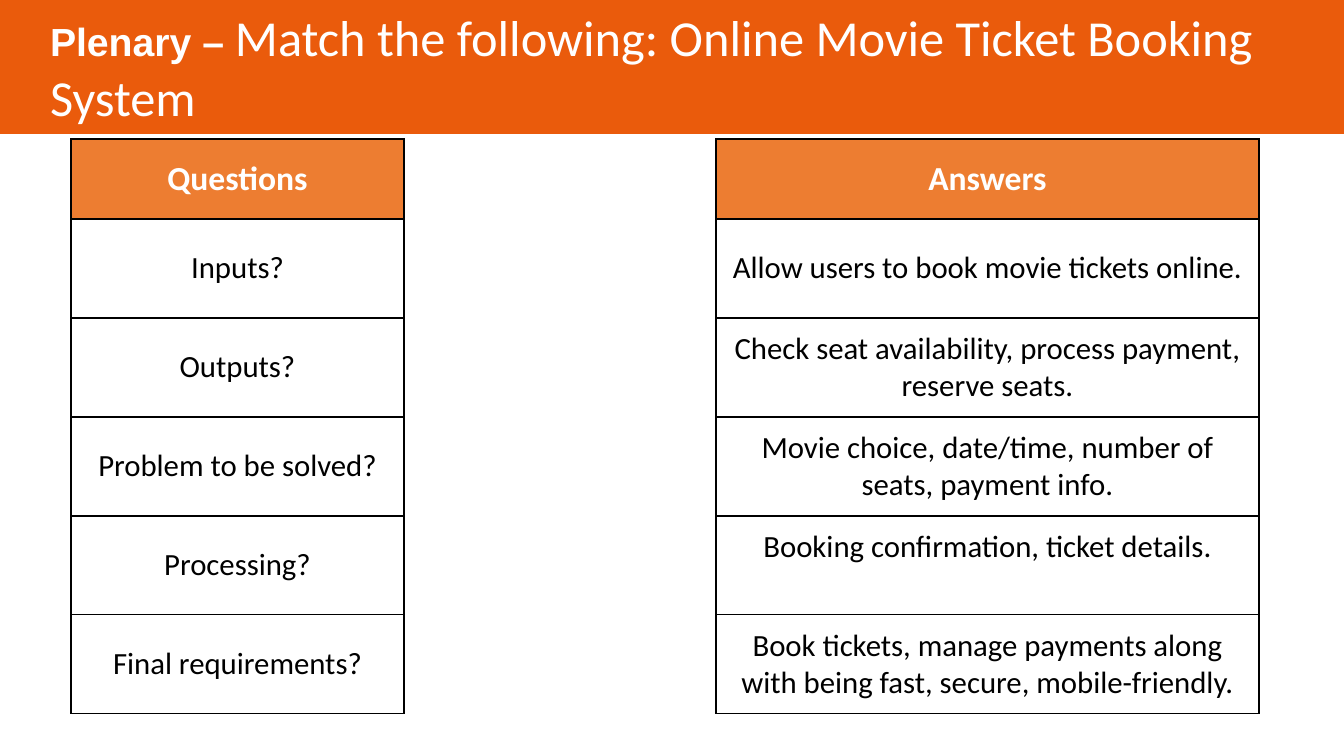
from lxml import etree
from pptx import Presentation
from pptx.dml.color import RGBColor
from pptx.enum import shapes, text
from pptx.oxml import ns
from pptx.util import Emu, Pt

# Content
TITLE_LEAD = "Plenary – "
TITLE = "Match the following: Online Movie Ticket Booking System"
ROWS = [
    ("Questions", "Answers"),
    ("Inputs?", "Allow users to book movie tickets online."),
    ("Outputs?", "Check seat availability, process payment, reserve seats."),
    ("Problem to be solved?", "Movie choice, date/time, number of seats, payment info."),
    ("Processing?", "Booking confirmation, ticket details."),
    ("Final requirements?",
     "Book tickets, manage payments along with being fast, secure, mobile-friendly."),
]
RAISED = "Booking confirmation, ticket details."

# Layout in px
SLIDE_W, SLIDE_H = 1344, 756
BANNER_H, BANNER_INSET = 133, 50
TABLE_X, TABLE_Y = 71, 139
COL_WIDTHS = [333, 312, 543]
HEAD_H, ROW_H = 80, 99
RAISED_INSET = 12

BANNER, HEAD, WHITE, BLACK = "EA5B0C", "ED7D31", "FFFFFF", "000000"


def px(n):
    return Emu(round(n * 914400 / 100.8))


def rgb(code):
    return RGBColor.from_string(code)


def add_text(p, words, size, color, font="Calibri", bold=False, align=text.PP_ALIGN.CENTER):
    p.alignment = align
    r = p.add_run()
    r.text = words
    r.font.size, r.font.name, r.font.bold = Pt(size), font, bold
    r.font.color.rgb = rgb(color)


def set_borders(cell, visible):
    tc_pr = cell._tc.get_or_add_tcPr()
    for i, side in enumerate("LRTB"):
        ln = etree.Element(ns.qn(f"a:ln{side}"), w=str(Pt(1)))
        if side in visible:
            fill = etree.SubElement(ln, ns.qn("a:solidFill"))
            etree.SubElement(fill, ns.qn("a:srgbClr"), val=BLACK)
        else:
            etree.SubElement(ln, ns.qn("a:noFill"))
        tc_pr.insert(i, ln)


prs = Presentation()
prs.slide_width, prs.slide_height = px(SLIDE_W), px(SLIDE_H)
s = prs.slides.add_slide(prs.slide_layouts[6])

# Title banner
sp = s.shapes.add_shape(shapes.MSO_SHAPE.RECTANGLE, 0, 0, px(SLIDE_W), px(BANNER_H))
sp.shadow.inherit = False
sp.fill.solid()
sp.fill.fore_color.rgb = rgb(BANNER)
sp.line.color.rgb = rgb(BANNER)
sp.line.width = Pt(1)
tf = sp.text_frame
tf.word_wrap = True
tf.margin_left = px(BANNER_INSET)
tf.vertical_anchor = text.MSO_ANCHOR.MIDDLE
p = tf.paragraphs[0]
add_text(p, TITLE_LEAD, 28, WHITE, font="Arial", bold=True, align=text.PP_ALIGN.LEFT)
add_text(p, TITLE, 36, WHITE, align=text.PP_ALIGN.LEFT)

# Matching table, with an open middle column
heights = [HEAD_H] + [ROW_H] * (len(ROWS) - 1)
table = s.shapes.add_table(len(ROWS), len(COL_WIDTHS), px(TABLE_X), px(TABLE_Y),
                           px(sum(COL_WIDTHS)), px(sum(heights))).table
table.first_row = table.horz_banding = False
for col, width in zip(table.columns, COL_WIDTHS):
    col.width = px(width)
for i, (question, answer) in enumerate(ROWS):
    table.rows[i].height = px(heights[i])
    head = i == 0
    for j, words in enumerate((question, "", answer)):
        cell = table.cell(i, j)
        if not words:
            cell.fill.background()
            set_borders(cell, "LR")
            continue
        cell.fill.solid()
        cell.fill.fore_color.rgb = rgb(HEAD if head else WHITE)
        set_borders(cell, "LRTB")
        cell.vertical_anchor = text.MSO_ANCHOR.MIDDLE
        if words == RAISED:
            cell.vertical_anchor = text.MSO_ANCHOR.TOP
            cell.margin_top = px(RAISED_INSET)
        add_text(cell.text_frame.paragraphs[0], words, 24 if head else 22,
                 WHITE if head else BLACK, bold=head)

prs.save("out.pptx")
